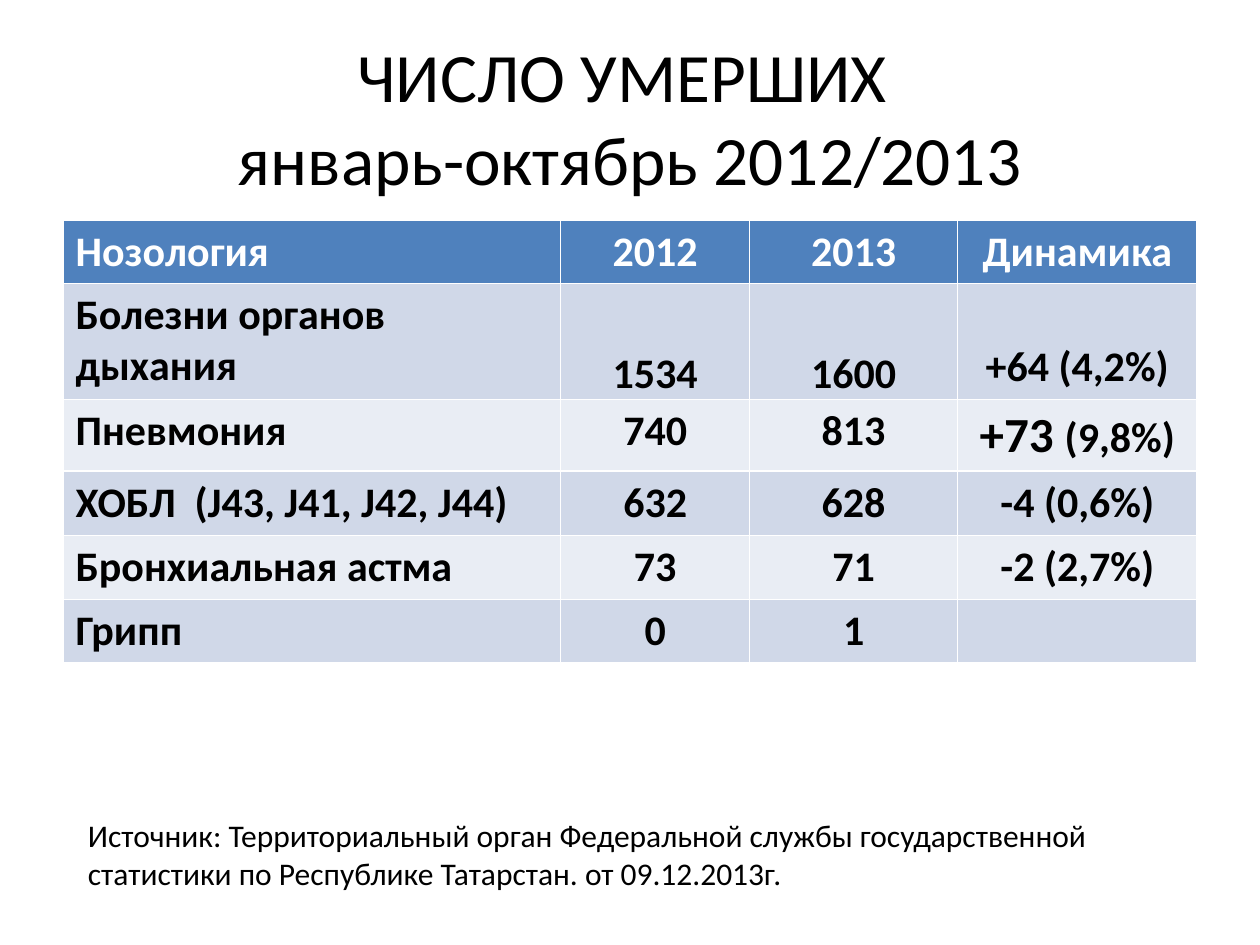
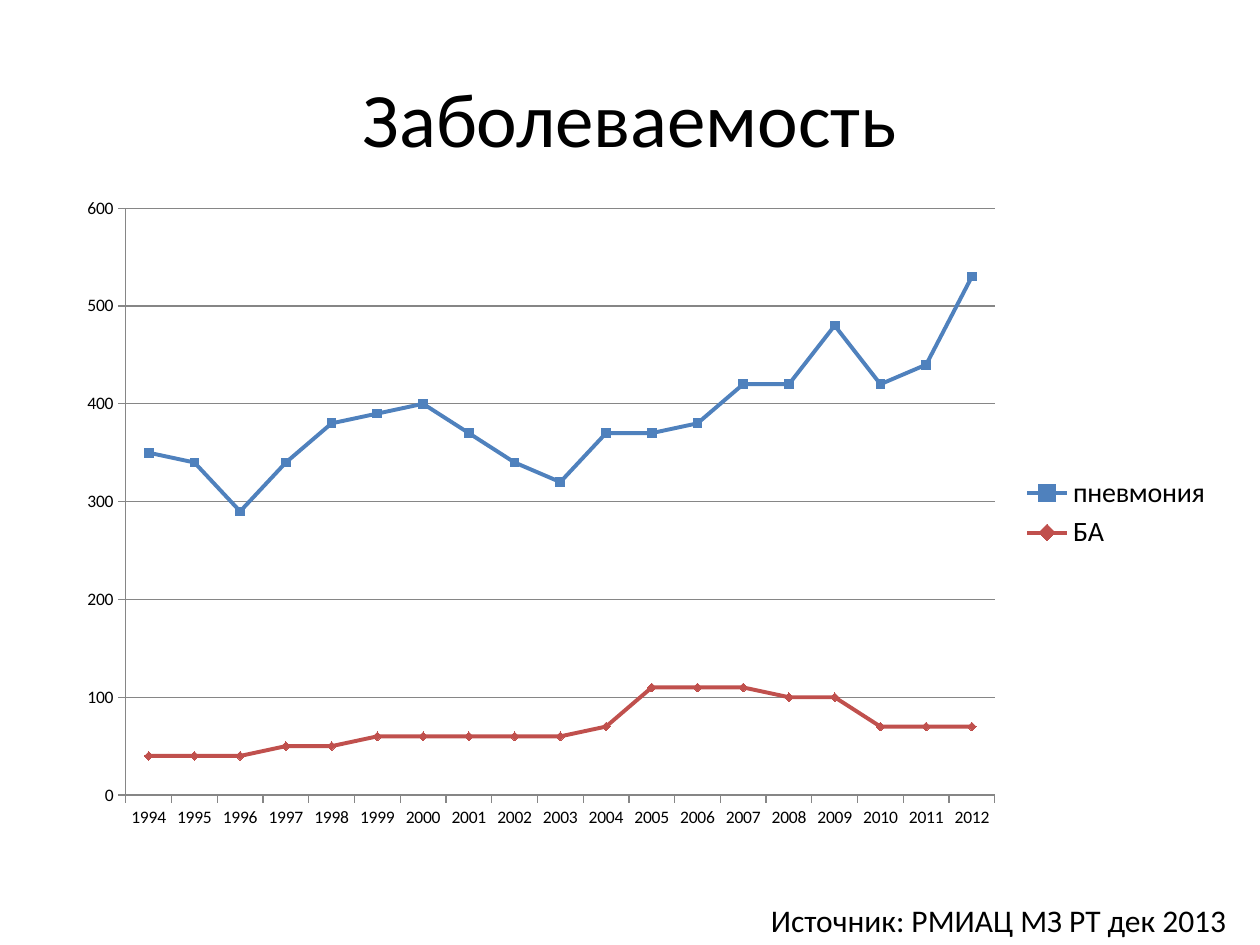
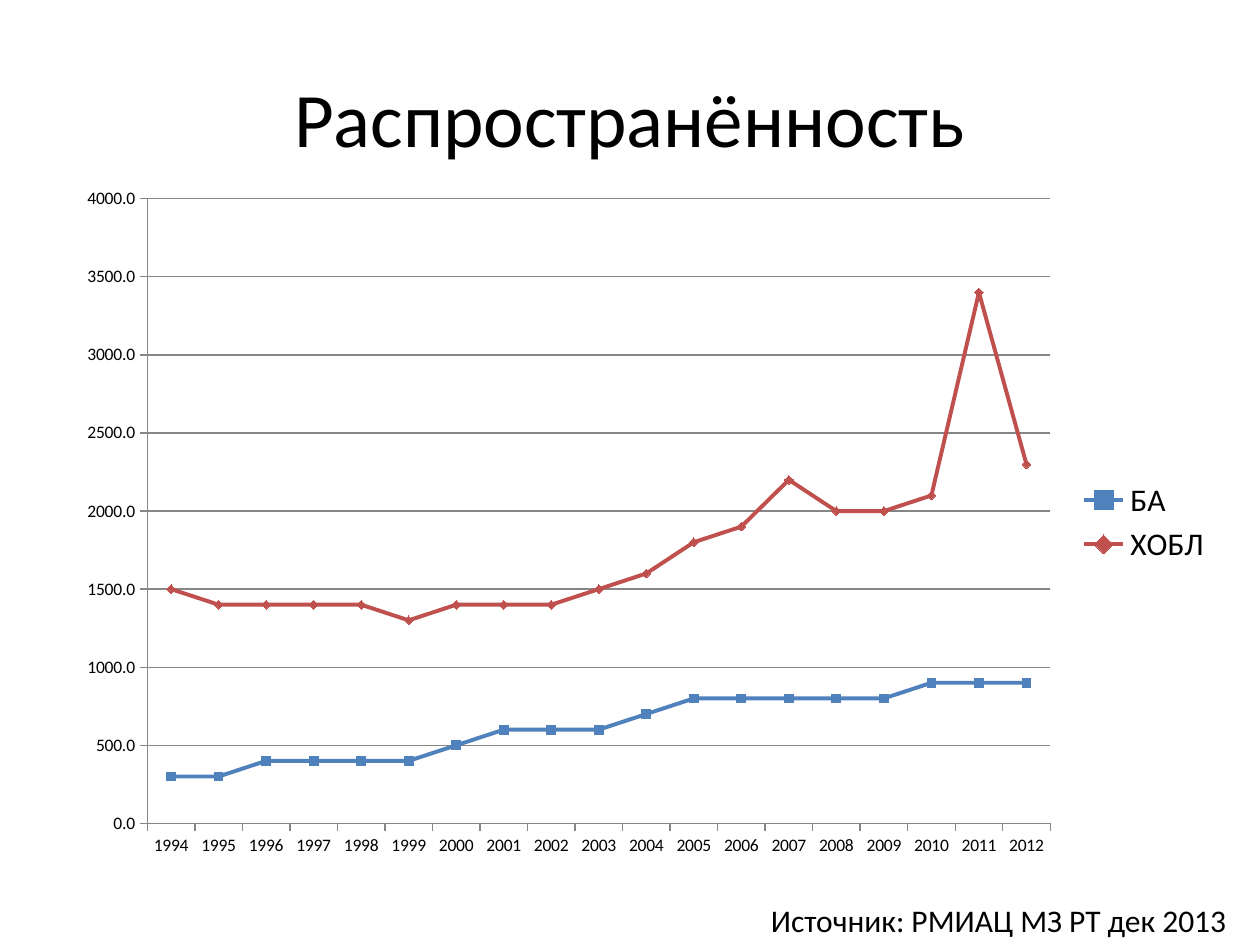
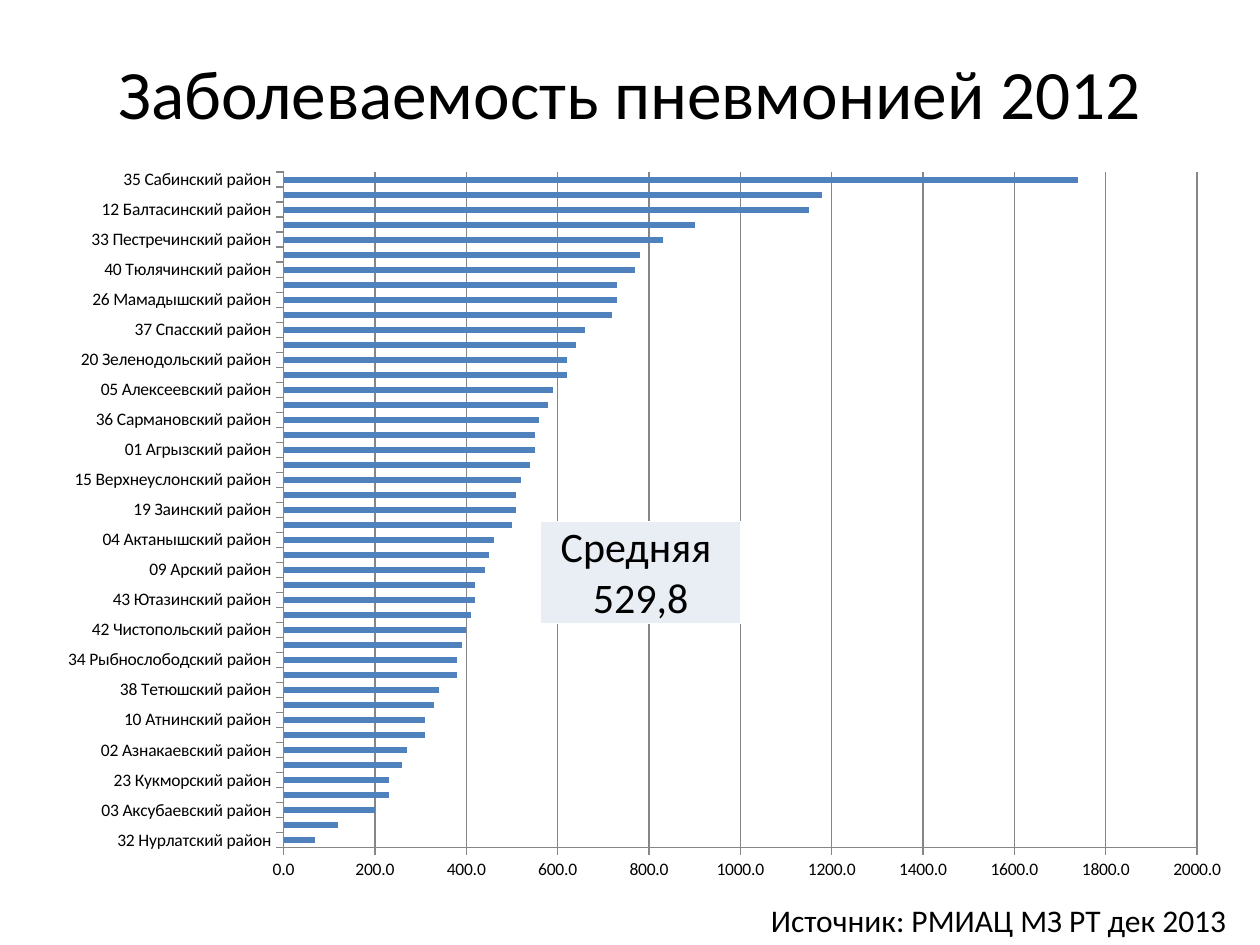
import pptx
import pptx.chart.data
import pptx.dml.color
import pptx.enum.chart
import pptx.enum.text
import pptx.util

Pt = pptx.util.Pt
Align = pptx.enum.text.PP_ALIGN
Anchor = pptx.enum.text.MSO_ANCHOR
ChartType = pptx.enum.chart.XL_CHART_TYPE
Marker = pptx.enum.chart.XL_MARKER_STYLE
Tick = pptx.enum.chart.XL_TICK_MARK

deck = pptx.Presentation()
deck.slide_width = pptx.util.Inches(10)
deck.slide_height = pptx.util.Inches(7.5)


def colour(code):
    return pptx.dml.color.RGBColor.from_string(code)


def box(left, top, width, height):
    across, down = deck.slide_width / 100, deck.slide_height / 100
    return int(left * across), int(top * down), int(width * across), int(height * down)


BLACK, WHITE, GREY = "000000", "FFFFFF", "868686"
BLUE, RED = "4F81BD", "C0504D"
BANDS = ["E9EDF4", "D0D8E8"]
TITLE_FONT = {"name": "Calibri", "size": Pt(44)}
SOURCE_FONT = {"name": "Calibri", "size": Pt(18)}
TABLE_FONT = {"name": "Calibri", "size": Pt(24), "bold": True}
MEAN_FONT = {"name": "Calibri", "size": Pt(24), "bold": False}
CHART_FONT = {"name": "Calibri", "size": Pt(10)}

statistics_source = (
    "Источник: Территориальный орган Федеральной службы государственной "
    "статистики по Республике Татарстан. от 09.12.2013г."
)
health_source = "Источник: РМИАЦ МЗ РТ дек 2013"
statistics_box = box(6, 85.73, 89, 9.47)
health_box = box(60.2, 94.67, 38.6, 5.33)

pages = [
    ("ЧИСЛО УМЕРШИХ \nянварь-октябрь 2012/2013", 39.6, 16.67, statistics_source, statistics_box, True),
    ("Заболеваемость", 44, 16.67, health_source, health_box, False),
    ("Распространённость", 44, 16.67, health_source, health_box, False),
    ("Заболеваемость пневмонией 2012", 39.6, 11.33, health_source, health_box, False),
]
slides = []
for heading, heading_size, heading_height, source, source_box, wraps in pages:
    slide = deck.slides.add_slide(deck.slide_layouts[5])
    slides.append(slide)
    title = slide.shapes.title
    title.left, title.top, title.width, title.height = box(5, 4, 90, heading_height)
    title.text_frame.vertical_anchor = Anchor.MIDDLE
    note = slide.shapes.add_textbox(*source_box)
    note.text_frame.word_wrap = wraps
    for part, words, values, align in [
        (title, heading, {**TITLE_FONT, "size": Pt(heading_size)}, Align.CENTER),
        (note, source, SOURCE_FONT, Align.LEFT),
    ]:
        paragraph = part.text_frame.paragraphs[0]
        paragraph.text = words
        paragraph.alignment = align
        for run in paragraph.runs:
            run.font.color.rgb = colour(BLACK)
            for attribute, value in values.items():
                setattr(run.font, attribute, value)

years = [str(year) for year in range(1994, 2013)]
districts = [
    ("32 Нурлатский район", 70),
    ("17 Дрожжановский район", 120),
    ("03 Аксубаевский район", 200),
    ("22 Камско-Устьинский район", 230),
    ("23 Кукморский район", 230),
    ("27 Менделеевский район", 260),
    ("02 Азнакаевский район", 270),
    ("08 Апастовский район", 310),
    ("10 Атнинский район", 310),
    ("14 Буинский район", 330),
    ("38 Тетюшский район", 340),
    ("25 Лениногорский район", 380),
    ("34 Рыбнослободский район", 380),
    ("44 г. Набережные Челны", 390),
    ("42 Чистопольский район", 400),
    ("13 Бугульминский район", 410),
    ("43 Ютазинский район", 420),
    ("07 Альметьевский район", 420),
    ("09 Арский район", 440),
    ("24 Лаишевский район", 450),
    ("04 Актанышский район", 460),
    ("06 Алькеевский район", 500),
    ("19 Заинский район", 510),
    ("39 Тукаевский район", 510),
    ("15 Верхнеуслонский район", 520),
    ("41 Черемшанский район", 540),
    ("01 Агрызский район", 550),
    ("30 Нижнекамский район", 550),
    ("36 Сармановский район", 560),
    ("18 Елабужский район", 580),
    ("05 Алексеевский район", 590),
    ("45 г. Казань", 620),
    ("20 Зеленодольский район", 620),
    ("31 Новошешминский район", 640),
    ("37 Спасский район", 660),
    ("29 Муслюмовский район", 720),
    ("26 Мамадышский район", 730),
    ("21 Кайбицкий район", 730),
    ("40 Тюлячинский район", 770),
    ("16 Высокогорский район", 780),
    ("33 Пестречинский район", 830),
    ("11 Бавлинский район", 900),
    ("12 Балтасинский район", 1150),
    ("28 Мензелинский район", 1180),
    ("35 Сабинский район", 1740),
]
district_names, district_rates = zip(*districts)

incidence = {
    "пневмония": [350, 340, 290, 340, 380, 390, 400, 370, 340, 320,
                  370, 370, 380, 420, 420, 480, 420, 440, 530],
    "БА": [40, 40, 40, 50, 50, 60, 60, 60, 60, 60,
           70, 110, 110, 110, 100, 100, 70, 70, 70],
}
prevalence = {
    "БА": [300, 300, 400, 400, 400, 400, 500, 600, 600, 600,
           700, 800, 800, 800, 800, 800, 900, 900, 900],
    "ХОБЛ": [1500, 1400, 1400, 1400, 1400, 1300, 1400, 1400, 1400, 1500,
             1600, 1800, 1900, 2200, 2000, 2000, 2100, 3400, 2300],
}
graphs = [
    (slides[1], ChartType.LINE_MARKERS, box(5.1, 19.6, 92.1, 69.33), years, incidence, "General", 16),
    (slides[2], ChartType.LINE_MARKERS, box(5.1, 18.53, 92.1, 73.47), years, prevalence, "0.0", 18),
    (slides[3], ChartType.BAR_CLUSTERED, box(3.5, 16.4, 95.3, 78.27), district_names,
     {"Series 1": district_rates}, "0.0", None),
]
for slide, kind, place, categories, rates, number_format, legend_size in graphs:
    data = pptx.chart.data.CategoryChartData()
    data.categories = categories
    for name, values in rates.items():
        data.add_series(name, values)
    chart = slide.shapes.add_chart(kind, *place, data).chart
    chart.has_title = False
    chart.font.color.rgb = colour(BLACK)
    for attribute, value in CHART_FONT.items():
        setattr(chart.font, attribute, value)

    chart.has_legend = legend_size is not None
    if chart.has_legend:
        chart.legend.position = pptx.enum.chart.XL_LEGEND_POSITION.RIGHT
        chart.legend.include_in_layout = False
        chart.legend.font.size = Pt(legend_size)

    chart.value_axis.has_major_gridlines = True
    chart.value_axis.major_gridlines.format.line.color.rgb = colour(GREY)
    chart.value_axis.tick_labels.number_format = number_format
    chart.value_axis.tick_labels.number_format_is_linked = False
    for axis in (chart.category_axis, chart.value_axis):
        axis.major_tick_mark = Tick.OUTSIDE
        axis.minor_tick_mark = Tick.NONE
        axis.format.line.color.rgb = colour(GREY)

    plot = chart.plots[0]
    plot.vary_by_categories = False
    if kind == ChartType.BAR_CLUSTERED:
        plot.gap_width = 150
    for series, shade, symbol in zip(plot.series, (BLUE, RED), (Marker.SQUARE, Marker.DIAMOND)):
        fills = [series.format.fill]
        if kind == ChartType.LINE_MARKERS:
            series.smooth = False
            series.format.line.width = Pt(2.25)
            series.format.line.color.rgb = colour(shade)
            series.marker.style = symbol
            series.marker.size = 5
            series.marker.format.line.color.rgb = colour(shade)
            fills = [series.marker.format.fill]
        for fill in fills:
            fill.solid()
            fill.fore_color.rgb = colour(shade)

deaths = [
    ["Нозология", "2012", "2013", "Динамика"],
    ["Болезни органов дыхания", "1534", "1600", "+64 (4,2%)"],
    ["Пневмония", "740", "813", "+73 (9,8%)"],
    ["ХОБЛ  (J43, J41, J42, J44)", "632", "628", "-4 (0,6%)"],
    ["Бронхиальная астма", "73", "71", "-2 (2,7%)"],
    ["Грипп", "0", "1", ""],
]
mean_rate = [["Средняя \n529,8"]]
grids = [
    (slides[0], deaths, box(5, 23.33, 90, 46.27), [39.5, 15, 16.5, 19],
     [6.67, 12.27, 7.6, 6.8, 6.8, 6.67], TABLE_FONT, True),
    (slides[3], mean_rate, box(42.9, 55.2, 15.9, 10.8), [15.9], [10.8], MEAN_FONT, False),
]
tables = []
for slide, rows, place, widths, heights, font_values, has_header in grids:
    table = slide.shapes.add_table(len(rows), len(widths), *place).table
    tables.append(table)
    table.first_row = has_header
    for column, share in zip(table.columns, widths):
        column.width = box(0, 0, share, 0)[2]
    for row, share in zip(table.rows, heights):
        row.height = box(0, 0, 0, share)[3]
    for r, row in enumerate(rows):
        for c, words in enumerate(row):
            header = has_header and r == 0
            cell = table.cell(r, c)
            cell.fill.solid()
            cell.fill.fore_color.rgb = colour(BLUE if header else BANDS[r % 2])
            cell.text_frame.text = words
            for paragraph in cell.text_frame.paragraphs:
                paragraph.alignment = Align.LEFT if has_header and c == 0 else Align.CENTER
                for run in paragraph.runs:
                    run.font.color.rgb = colour(WHITE if header else BLACK)
                    for attribute, value in font_values.items():
                        setattr(run.font, attribute, value)

deaths_table, mean_table = tables
for c in (1, 2, 3):
    deaths_table.cell(1, c).vertical_anchor = Anchor.BOTTOM
for c in (1, 2):
    total = deaths_table.cell(1, c)
    total.margin_top = total.margin_bottom = 0
    total.text_frame.paragraphs[0].line_spacing = 1.15

pneumonia_change = deaths_table.cell(2, 3).text_frame.paragraphs[0]
growth = pneumonia_change.runs[0]
growth.text = "+73 "
growth.font.size = Pt(28)
percentage = pneumonia_change.add_run()
percentage.text = "(9,8%)"
percentage.font.color.rgb = colour(BLACK)
for attribute, value in TABLE_FONT.items():
    setattr(percentage.font, attribute, value)

mean_cell = mean_table.cell(0, 0)
mean_cell.vertical_anchor = Anchor.BOTTOM
mean_margins = {"margin_left": 0.01, "margin_right": 0.01, "margin_top": 0.01, "margin_bottom": 0}
for attribute, value in mean_margins.items():
    setattr(mean_cell, attribute, pptx.util.Inches(value))

deck.save("out.pptx")
